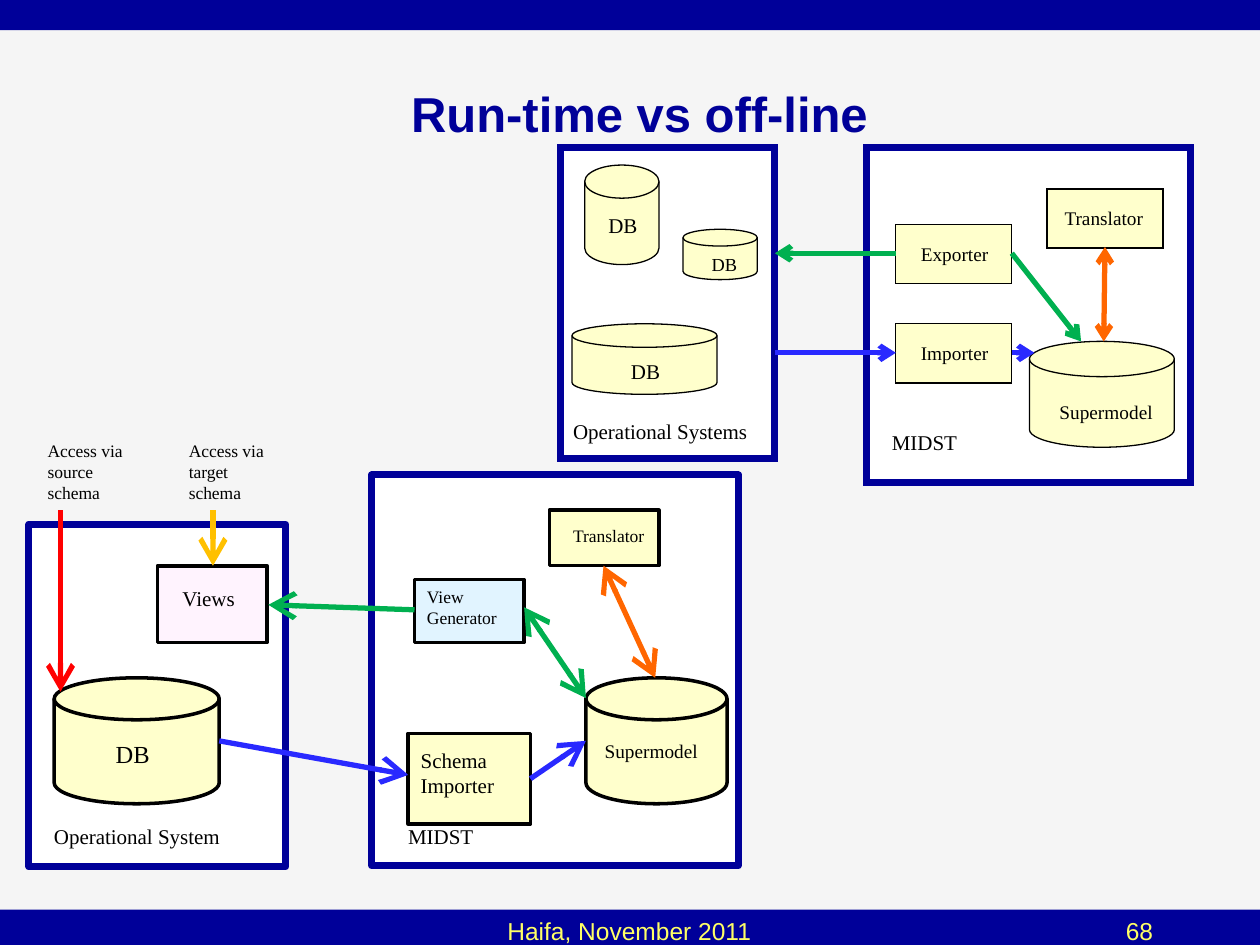
import dataclasses

import lxml.etree
import pptx
import pptx.dml.color
import pptx.enum.shapes
import pptx.enum.text
import pptx.oxml.ns
import pptx.util

Inches = pptx.util.Inches
SHAPES = pptx.enum.shapes.MSO_SHAPE
ALIGN = pptx.enum.text.PP_ALIGN
ANCHOR = pptx.enum.text.MSO_ANCHOR


@dataclasses.dataclass(frozen=True)
class Theme:
    background: str = "F5F5F5"
    navy: str = "000099"
    white: str = "FFFFFF"
    black: str = "000000"
    footer: str = "FFFF66"
    cream: str = "FFFFCC"
    pale_blue: str = "E1F4FF"
    pale_pink: str = "FFF3FE"
    orange: str = "FF6600"
    blue: str = "2929FF"
    green: str = "00B050"
    amber: str = "FFC000"
    red: str = "FF0000"
    heading_font: str = "Arial"
    label_font: str = "Times New Roman"
    title_size: float = 28
    large: float = 14
    normal: float = 12
    medium: float = 11
    small: float = 10
    tiny: float = 10.5
    frame_line: float = 4
    arrow_line: float = 3


def rgb(value):
    return pptx.dml.color.RGBColor.from_string(value)


def set_values(target, values):
    for name, value in values.items():
        setattr(target, name, value)


def add_line_part(line, tag, **attributes):
    """Append a join or arrowhead element to a line's properties."""
    properties = line._get_or_add_ln()
    lxml.etree.SubElement(properties, pptx.oxml.ns.qn(tag), attributes)


class SlideBuilder:
    def __init__(self, slide, theme):
        self.slide = slide
        self.theme = theme
        slide.background.fill.solid()
        slide.background.fill.fore_color.rgb = rgb(theme.background)

    def shape(self, kind, box, fill, line_color=None, line_width=0.75, join="a:miter"):
        shape = self.slide.shapes.add_shape(kind, *map(Inches, box))
        shape.shadow.inherit = False
        shape.fill.solid()
        shape.fill.fore_color.rgb = rgb(fill)
        if line_color is None:
            shape.line.fill.background()
        else:
            shape.line.color.rgb = rgb(line_color)
            shape.line.width = pptx.util.Pt(line_width)
            add_line_part(shape.line, join)

    def bar(self, top, height):
        self.shape(SHAPES.RECTANGLE, (0, top, 10, height), self.theme.navy)

    def frame(self, box, join):
        self.shape(SHAPES.RECTANGLE, box, self.theme.white, self.theme.navy,
                   self.theme.frame_line, join)

    def block(self, box, line_width, join, fill=None):
        self.shape(SHAPES.RECTANGLE, box, fill or self.theme.cream,
                   self.theme.black, line_width, join)

    def disk(self, box, line_width, join):
        self.shape(SHAPES.FLOWCHART_MAGNETIC_DISK, box, self.theme.cream,
                   self.theme.black, line_width, join)

    def text(self, box, lines, size, font=None, color=None, bold=False,
             align=ALIGN.LEFT, anchor=ANCHOR.TOP):
        frame = self.slide.shapes.add_textbox(*map(Inches, box)).text_frame
        set_values(frame, {"word_wrap": True, "vertical_anchor": anchor})
        frame.text = lines
        for paragraph in frame.paragraphs:
            paragraph.alignment = align
            for run in paragraph.runs:
                set_values(run.font, {
                    "name": font or self.theme.label_font,
                    "size": pptx.util.Pt(size),
                    "bold": bold,
                })
                run.font.color.rgb = rgb(color or self.theme.black)

    def arrow(self, start, end, color, head_size, both_ends=False):
        connector = self.slide.shapes.add_connector(
            pptx.enum.shapes.MSO_CONNECTOR.STRAIGHT, *map(Inches, start + end))
        connector.line.color.rgb = rgb(color)
        connector.line.width = pptx.util.Pt(self.theme.arrow_line)
        for tag in ("a:headEnd", "a:tailEnd") if both_ends else ("a:tailEnd",):
            add_line_part(connector.line, tag, type="arrow", w=head_size, len=head_size)
        lxml.etree.SubElement(connector._element.spPr, pptx.oxml.ns.qn("a:effectLst"))


def add_page_furniture(builder):
    theme = builder.theme
    for top, height in ((7.22, 0.36), (0.11, 0.13), (0, 0.13)):
        builder.bar(top, height)
    builder.text((0.39, 0.31, 9.37, 1.17), "Run-time vs off-line", theme.title_size,
                 theme.heading_font, theme.navy, True, ALIGN.CENTER, ANCHOR.MIDDLE)
    for left, width, words, align in ((2.16, 5.67, "Haifa, November 2011", ALIGN.CENTER),
                                      (7.91, 1.34, "68", ALIGN.RIGHT)):
        builder.text((left, 7.22, width, 0.5), words, theme.large,
                     theme.heading_font, theme.footer, align=align)


def add_offline_diagram(builder):
    theme = builder.theme
    line_width, join = 0.75, "a:miter"
    for box in ((4.45, 1.17, 1.7, 2.47), (6.88, 1.17, 2.57, 2.66)):
        builder.frame(box, join)
    for box in ((4.54, 2.57, 1.15, 0.56), (8.17, 2.71, 1.15, 0.84),
                (5.42, 1.82, 0.59, 0.4), (4.64, 1.31, 0.59, 0.79)):
        builder.disk(box, line_width, join)
    for left, top, name in ((8.31, 1.5, "Translator"), (7.11, 1.78, "Exporter"),
                            (7.11, 2.57, "Importer")):
        builder.block((left, top, 0.92, 0.47), line_width, join)
        label_left = left + (0.04 if name == "Translator" else 0.1)
        builder.text((label_left, top + 0.09, 0.92, 0.34), name, theme.medium)
    for start, end, color, both_ends in (
            ((8.77, 1.96), (8.76, 2.71), theme.orange, True),
            ((8.03, 2.8), (8.21, 2.8), theme.blue, False),
            ((6.15, 2.8), (7.11, 2.8), theme.blue, False),
            ((8.03, 2.01), (8.58, 2.71), theme.green, False),
            ((7.11, 2.01), (6.15, 2.01), theme.green, False)):
        builder.arrow(start, end, color, "med", both_ends)
    for box, words, size in (
            ((4.45, 3.27, 1.71, 0.36), "Operational Systems", theme.normal),
            ((6.98, 3.36, 0.77, 0.36), "MIDST", theme.normal),
            ((8.31, 3.13, 1.01, 0.34), "Supermodel", theme.medium),
            ((4.91, 2.8, 0.46, 0.36), "DB", theme.normal),
            ((4.73, 1.64, 0.46, 0.36), "DB", theme.normal),
            ((5.55, 1.96, 0.45, 0.34), "DB", theme.tiny)):
        builder.text(box, words, size)


def add_runtime_diagram(builder):
    theme = builder.theme
    line_width, join = 2, "a:round"
    for box in ((0.23, 4.16, 2.04, 2.72), (2.95, 3.77, 2.91, 3.1)):
        builder.frame(box, join)
    for box, fill in (((4.36, 4.05, 0.87, 0.44), theme.cream),
                      ((3.29, 4.6, 0.87, 0.5), theme.pale_blue),
                      ((3.24, 5.82, 0.97, 0.72), theme.cream),
                      ((1.25, 4.49, 0.87, 0.61), theme.pale_pink)):
        builder.block(box, line_width, join, fill)
    for left, width in ((0.43, 1.31), (4.65, 1.12)):
        builder.disk((left, 5.38, width, 1), line_width, join)
    for box, words, size in (
            ((1.35, 4.6, 0.73, 0.33), "Views", theme.normal),
            ((0.82, 5.82, 0.48, 0.63), "DB", theme.large),
            ((4.7, 5.82, 1.07, 0.31), "Supermodel", theme.medium),
            ((3.24, 5.88, 0.92, 0.56), "Schema\nImporter", theme.normal),
            ((3.29, 4.6, 1.02, 0.48), "View\nGenerator", theme.small),
            ((4.45, 4.12, 0.78, 0.48), "Translator", theme.small),
            ((3.14, 6.49, 0.87, 0.33), "MIDST", theme.normal),
            ((0.33, 6.49, 2.04, 0.33), "Operational System", theme.normal),
            ((1.4, 3.44, 0.87, 0.61), "Access via target schema", theme.small),
            ((0.28, 3.44, 0.89, 0.61), "Access via source schema", theme.small)):
        builder.text(box, words, size)
    for start, end, color, both_ends in (
            ((4.79, 4.49), (5.2, 5.38), theme.orange, True),
            ((4.16, 4.82), (4.65, 5.54), theme.green, True),
            ((4.21, 6.18), (4.65, 5.88), theme.blue, False),
            ((3.29, 4.84), (2.13, 4.8), theme.green, False),
            ((1.74, 5.88), (3.24, 6.15), theme.blue, False),
            ((1.69, 4.05), (1.69, 4.49), theme.amber, False),
            ((0.48, 4.05), (0.48, 5.49), theme.red, False)):
        builder.arrow(start, end, color, "lg", both_ends)


def main():
    presentation = pptx.Presentation()
    set_values(presentation, {"slide_width": Inches(10), "slide_height": Inches(7.5)})
    slide = presentation.slides.add_slide(presentation.slide_layouts[6])
    builder = SlideBuilder(slide, Theme())
    add_page_furniture(builder)
    add_offline_diagram(builder)
    add_runtime_diagram(builder)
    presentation.save("out.pptx")


if __name__ == "__main__":
    main()
